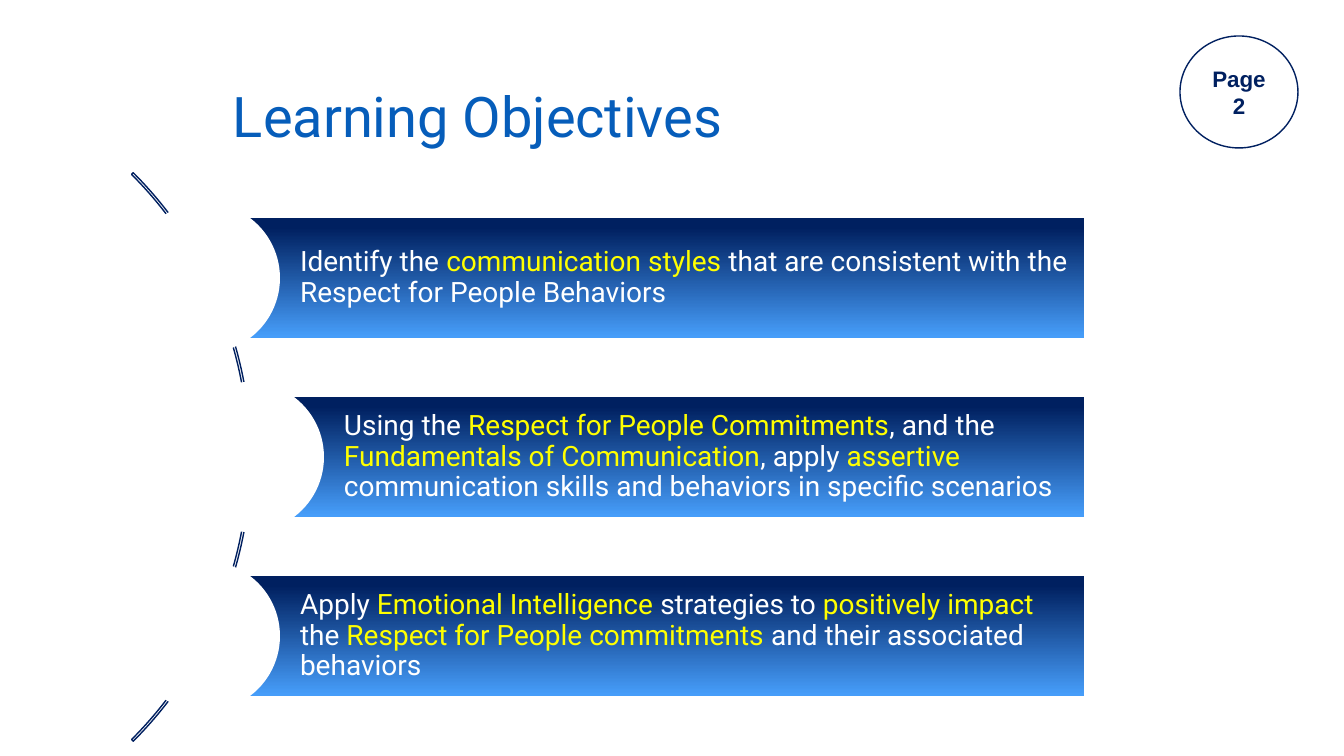
from pptx import Presentation
from pptx.dml.color import RGBColor
from pptx.enum.shapes import MSO_SHAPE
from pptx.enum.text import MSO_ANCHOR, PP_ALIGN
from pptx.util import Emu, Pt

WIDE, HIGH = 1344, 756
SCALE = 12192000 / WIDE
NAVY, SKY, BLUE = "002060", "469DF9", "065DBA"
WHITE, GOLD = "FFFFFF", "FFFF00"

# Each goal alternates plain and marked text, starting with plain
GOALS = [
    (0, ["Identify the ", "communication styles ",
         "that are consistent with the Respect for People Behaviors"]),
    (44, ["Using the ", "Respect for People Commitments", ", and the ",
          "Fundamentals of Communication", ", apply ", "assertive",
          " communication skills and behaviors in specific scenarios"]),
    (0, ["Apply ", "Emotional Intelligence ", "strategies to ",
         "positively impact", " the ", "Respect for People commitments ",
         "and their associated behaviors"]),
]


def px(n):
    return Emu(round(n * SCALE))


def tint(code):
    return RGBColor.from_string(code)


def put_text(shape, parts, size, inks, font="Roboto", bold=False,
             align=PP_ALIGN.LEFT, space=0.9, pads=(10, 5, 10, 5)):
    """Write the parts as runs, taking the inks in turn."""
    frame = shape.text_frame
    frame.word_wrap = True
    frame.vertical_anchor = MSO_ANCHOR.MIDDLE
    (frame.margin_left, frame.margin_top,
     frame.margin_right, frame.margin_bottom) = map(px, pads)
    para = frame.paragraphs[0]
    para.alignment, para.line_spacing = align, space
    for i, part in enumerate(parts):
        run = para.add_run()
        run.text = part
        run.font.name, run.font.size, run.font.bold = font, Pt(size), bold
        run.font.color.rgb = tint(inks[i % len(inks)])


def add_form(slide, kind, box, fill=None, line=None):
    shape = slide.shapes.add_shape(kind, *map(px, box))
    shape.shadow.inherit = False
    if fill:
        shape.fill.solid()
        shape.fill.fore_color.rgb = tint(fill)
    else:
        shape.fill.background()
    if line:
        shape.line.color.rgb = tint(line)
        shape.line.width = Pt(1)
    else:
        shape.line.fill.background()
    return shape


def add_title(slide, x, y, w, h):
    box = slide.shapes.add_textbox(*map(px, (x, y, w, h)))
    put_text(box, ["Learning Objectives"], 40, [BLUE], pads=(111, 5, 10, 5))


def add_goal(slide, x, y, w, h, parts):
    # Bar with a vertical fade
    bar = add_form(slide, MSO_SHAPE.RECTANGLE, (x, y, w, h))
    bar.fill.gradient()
    bar.fill.gradient_angle = 270
    for stop, (spot, code) in zip(bar.fill.gradient_stops,
                                  [(0.08, NAVY), (0.99, SKY)]):
        stop.position = spot
        stop.color.rgb = tint(code)
    put_text(bar, parts, 20, [WHITE, GOLD], pads=(95, 6, 6, 6))
    # White disc centred on the bar's left side
    disc = h * 5 // 4
    add_form(slide, MSO_SHAPE.OVAL,
             (x - disc // 2, y + (h - disc) // 2, disc, disc), WHITE)


def add_list(slide, x, y, w, h):
    # Thin arc behind the discs, from -45 to 45 degrees
    size = 804
    arc = add_form(slide, MSO_SHAPE.BLOCK_ARC,
                   (x - 758, y + (h - size) // 2, size, size), line=NAVY)
    for i, value in enumerate((189, 27, 0.003)):
        arc.adjustments[i] = value
    # Goals at an equal pitch
    tall = 120
    pitch = (h - tall) // (len(GOALS) - 1)
    for i, (shift, parts) in enumerate(GOALS):
        add_goal(slide, x + shift, y + i * pitch, w - shift, tall, parts)


def add_badge(slide, x, y, w, h):
    badge = add_form(slide, MSO_SHAPE.OVAL, (x, y, w, h), WHITE, NAVY)
    put_text(badge, ["Page 2"], 16, [NAVY], font="Arial", bold=True,
             align=PP_ALIGN.CENTER, space=1.0)


def main():
    deck = Presentation()
    deck.slide_width, deck.slide_height = px(WIDE), px(HIGH)
    slide = deck.slides.add_slide(deck.slide_layouts[6])
    add_title(slide, 122, 52, 1129, 134)
    add_list(slide, 205, 218, 879, 478)
    add_badge(slide, 1180, 36, 118, 112)
    deck.save("out.pptx")


if __name__ == "__main__":
    main()
